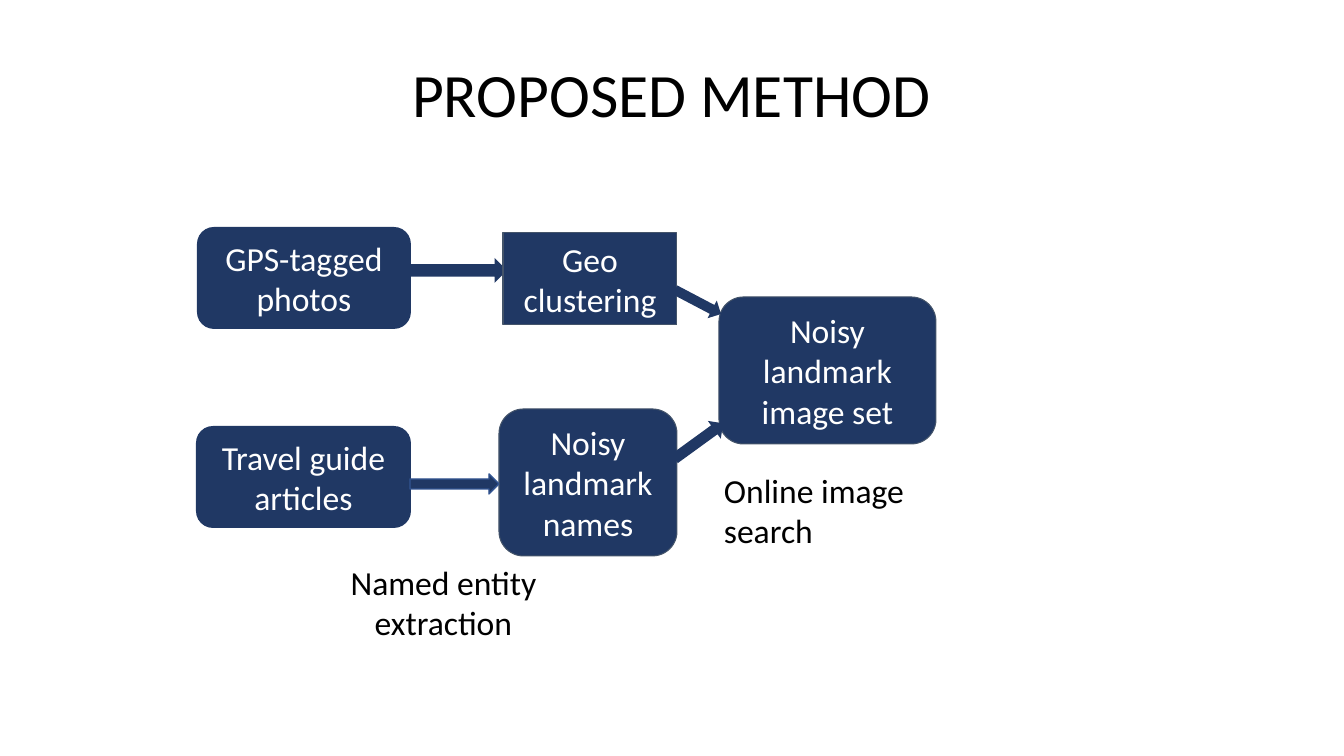
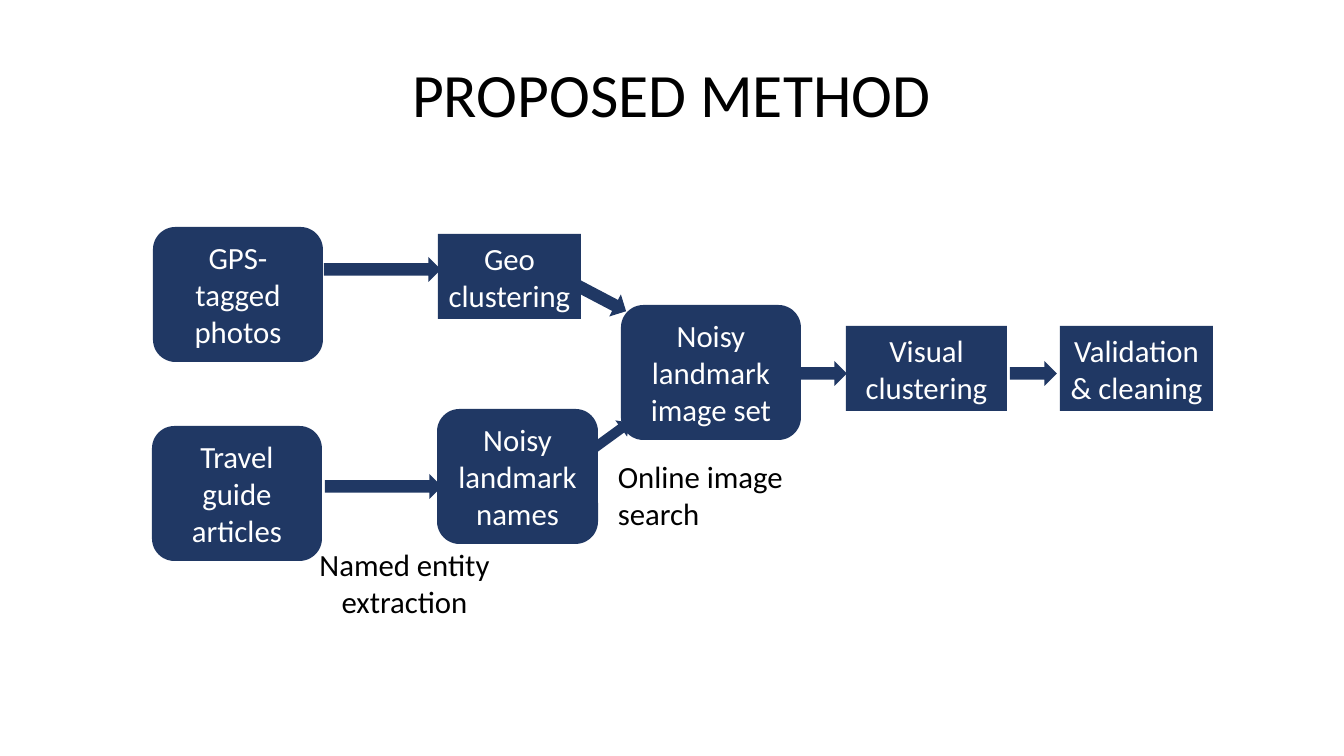
import pptx
import pptx.dml.color
import pptx.enum.shapes
import pptx.enum.text
import pptx.util

PX = 914400 / 100.8
COLORS = {
    "navy": "203864",
    "slate": "44546A",
    "blue": "325491",
    "white": "FFFFFF",
    "black": "000000",
}
FONT = "Calibri"
SHAPES = pptx.enum.shapes.MSO_SHAPE
ALIGN = pptx.enum.text.PP_ALIGN
ANCHOR = pptx.enum.text.MSO_ANCHOR
SLATE_LINE = ("slate", 0.75)

TITLE = "PROPOSED METHOD"
TITLE_BOX = (92, 40, 1159, 116)
PHOTOS = "GPS-tagged photos"
ARTICLES = "Travel guide articles"
NAMES = "Noisy landmark names"
GEO = "Geo clustering"
IMAGE_SET = "Noisy landmark image set"
EXTRACTION = "Named entity extraction"
SEARCH = "Online image search"


def px(length):
    """Turn a pixel length into EMU."""
    return pptx.util.Emu(round(length * PX))


def rgb(name):
    """Look up a named colour."""
    return pptx.dml.color.RGBColor.from_string(COLORS[name])


def write_text(shape, text, size, color, align):
    """Put one styled paragraph into a shape and return the paragraph."""
    frame = shape.text_frame
    frame.word_wrap = True
    frame.text = text
    paragraph = frame.paragraphs[0]
    paragraph.alignment = align
    font = paragraph.runs[0].font
    font.name, font.size = FONT, pptx.util.Pt(size)
    font.color.rgb = rgb(color)
    return paragraph


def add_title(slide, box):
    """Add the centred slide title."""
    shape = slide.shapes.add_textbox(*map(px, box))
    paragraph = write_text(shape, TITLE, 44, "black", ALIGN.CENTER)
    paragraph.line_spacing = 0.9
    shape.text_frame.vertical_anchor = ANCHOR.MIDDLE


def add_solid(slide, kind, box, outline=None):
    """Add a navy preset shape, outlined only when asked."""
    shape = slide.shapes.add_shape(kind, *map(px, box))
    shape.shadow.inherit = False
    shape.fill.solid()
    shape.fill.fore_color.rgb = rgb("navy")
    if outline:
        color, width = outline
        shape.line.color.rgb = rgb(color)
        shape.line.width = pptx.util.Pt(width)
    else:
        shape.line.fill.background()
    return shape


def add_node(slide, box, size, text, kind, outline=None):
    """Add a flow node with white centred text."""
    shape = add_solid(slide, kind, box, outline)
    write_text(shape, text, size, "white", ALIGN.CENTER)
    shape.text_frame.vertical_anchor = ANCHOR.MIDDLE


def add_data(slide, box, size, text, outline=None):
    """Add a rounded node for a data set."""
    add_node(slide, box, size, text, SHAPES.ROUNDED_RECTANGLE, outline)


def add_step(slide, box, size, text, outline=None):
    """Add a square-cornered node for a processing step."""
    add_node(slide, box, size, text, SHAPES.RECTANGLE, outline)


def add_arrow(slide, box, size, rotation=0, outline=None):
    """Add a block arrow between nodes."""
    add_solid(slide, SHAPES.RIGHT_ARROW, box, outline).rotation = rotation


def add_label(slide, box, size, text, align):
    """Add a plain caption beside an arrow."""
    shape = slide.shapes.add_textbox(*map(px, box))
    write_text(shape, text, size, "black", align)


def add_flow(slide, origin, size, parts):
    """Place flow parts relative to the diagram's corner."""
    for add_part, (left, top, width, height), *details in parts:
        box = (origin[0] + left, origin[1] + top, width, height)
        add_part(slide, box, size, *details)


COLLECTION_FLOW = [
    (add_data, (2, 0, 214, 102), PHOTOS),
    (add_data, (1, 199, 215, 102), ARTICLES),
    (add_arrow, (211, 31, 101, 25)),
    (add_data, (304, 182, 178, 147), NAMES, SLATE_LINE),
    (add_step, (308, 6, 174, 92), GEO, SLATE_LINE),
    (add_label, (105, 330, 287, 92), EXTRACTION, ALIGN.CENTER),
    (add_arrow, (215, 247, 89, 20), 0, ("blue", 1)),
    (add_data, (524, 70, 217, 147), IMAGE_SET, SLATE_LINE),
    (add_arrow, (474, 203, 60, 22), 324),
    (add_arrow, (477, 65, 52, 20), 27.7),
    (add_label, (519, 238, 259, 92), SEARCH, ALIGN.LEFT),
]

FULL_FLOW = [
    (add_label, (456, 226, 259, 85), SEARCH, ALIGN.LEFT),
    (add_data, (1, 0, 170, 135), PHOTOS),
    (add_data, (0, 199, 170, 135), ARTICLES),
    (add_data, (469, 78, 180, 135), IMAGE_SET),
    (add_step, (694, 99, 161, 85), "Visual clustering"),
    (add_step, (908, 99, 153, 85), "Validation & cleaning"),
    (add_arrow, (172, 30, 117, 25)),
    (add_arrow, (433, 200, 49, 20), 324),
    (add_data, (285, 182, 161, 135), NAMES),
    (add_arrow, (394, 52, 85, 25), 27.7),
    (add_step, (286, 7, 143, 85), GEO),
    (add_label, (109, 314, 287, 85), EXTRACTION, ALIGN.CENTER),
    (add_arrow, (173, 247, 117, 25)),
    (add_arrow, (648, 134, 47, 25)),
    (add_arrow, (858, 134, 47, 25)),
]


def add_method_slide(presentation, origin, size, parts):
    """Add a titled slide holding one flow diagram."""
    slide = presentation.slides.add_slide(presentation.slide_layouts[6])
    add_flow(slide, origin, size, parts)
    add_title(slide, TITLE_BOX)


def main():
    """Build and save the presentation."""
    presentation = pptx.Presentation()
    presentation.slide_width, presentation.slide_height = px(1344), px(756)
    add_method_slide(presentation, (195, 227), 24, COLLECTION_FLOW)
    add_method_slide(presentation, (152, 227), 22, FULL_FLOW)
    presentation.save("out.pptx")


if __name__ == "__main__":
    main()
